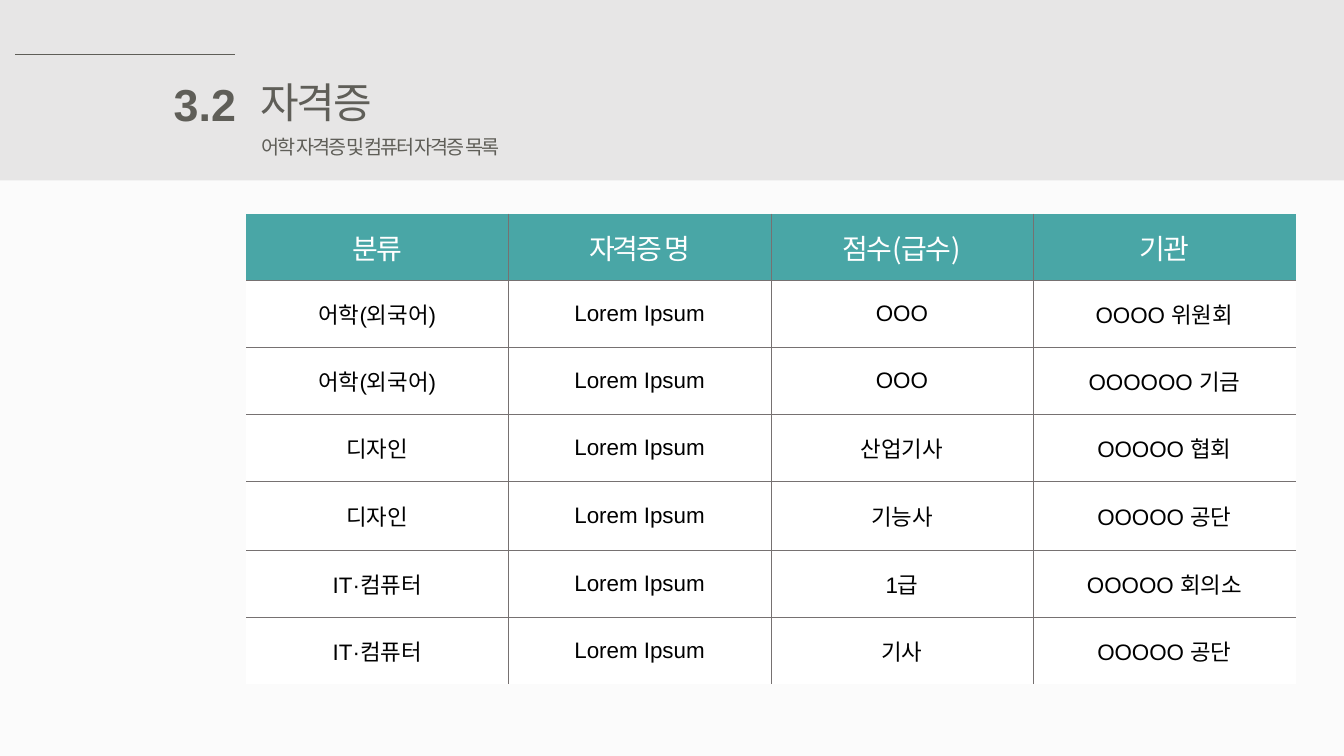
"""Builds the certificate list slide."""
from lxml import etree
from pptx import Presentation
from pptx.dml.color import RGBColor
from pptx.enum.shapes import MSO_CONNECTOR, MSO_SHAPE
from pptx.enum.text import MSO_ANCHOR, MSO_AUTO_SIZE, PP_ALIGN
from pptx.oxml.ns import qn
from pptx.util import Inches, Pt

LEFT, MID, RIGHT = PP_ALIGN.LEFT, PP_ALIGN.CENTER, PP_ALIGN.RIGHT
TOP, CENTRE = MSO_ANCHOR.TOP, MSO_ANCHOR.MIDDLE
GROW = MSO_AUTO_SIZE.SHAPE_TO_FIT_TEXT
RECT, LINE = MSO_SHAPE.RECTANGLE, MSO_CONNECTOR.STRAIGHT
SANS, KOREAN = "Arial", "Noto Sans CJK KR"
INK, TEAL, RULE, WHITE, BLACK = "5F5E58", "49A6A6", "767171", "FFFFFF", "000000"

ROWS = [
    ("분류", "자격증 명", "점수(급수)", "기관"),
    ("어학(외국어)", "Lorem Ipsum", "OOO", "OOOO 위원회"),
    ("어학(외국어)", "Lorem Ipsum", "OOO", "OOOOOO 기금"),
    ("디자인", "Lorem Ipsum", "산업기사", "OOOOO 협회"),
    ("디자인", "Lorem Ipsum", "기능사", "OOOOO 공단"),
    ("IT·컴퓨터", "Lorem Ipsum", "1급", "OOOOO 회의소"),
    ("IT·컴퓨터", "Lorem Ipsum", "기사", "OOOOO 공단"),
]
TALL_ROW, TALL = 4, 0.69


def paint(target, color):
    """Give a fill or line fill one solid colour."""
    target.solid()
    target.fore_color.rgb = RGBColor.from_string(color)


class Deck:
    """Holds the text style and the current slide."""

    def __init__(self):
        """Open a wide deck with one titled slide."""
        self.prs = Presentation()
        self.prs.slide_width = Inches(13.33)
        self.prs.slide_height = Inches(7.5)
        self.slide = self.prs.slides.add_slide(self.prs.slide_layouts[5])
        self.shapes = self.slide.shapes
        paint(self.slide.background.fill, "FBFBFB")

    def style(self, frame, text, size, font, color, align, space=0, bold=False):
        """Set the text of a frame and format its run."""
        frame.text = text
        para = frame.paragraphs[0]
        para.alignment = align
        run = para.runs[0]
        run.font.size = Pt(size)
        run.font.name = font
        run.font.bold = bold
        run.font.color.rgb = RGBColor.from_string(color)
        props = run.font._element
        props.set("spc", str(round(space * 100)))
        etree.SubElement(props, qn("a:ea"), typeface=KOREAN)

    def band(self, box, color):
        """Draw a plain filled rectangle."""
        shape = self.shapes.add_shape(RECT, *map(Inches, box))
        shape.shadow.inherit = False
        paint(shape.fill, color)
        shape.line.fill.background()

    def line(self, start, end, color, width):
        """Draw a straight line without a shadow."""
        rule = self.shapes.add_connector(LINE, *map(Inches, start + end))
        paint(rule.line.fill, color)
        rule.line.width = Pt(width)
        etree.SubElement(rule._element.spPr, qn("a:effectLst"))

    def place(self, shape, box, text, wrap=False, **look):
        """Position a text shape and fill it."""
        shape.left, shape.top, shape.width, shape.height = map(Inches, box)
        frame = shape.text_frame
        frame.word_wrap = wrap
        frame.auto_size = GROW
        frame.vertical_anchor = TOP
        self.style(frame, text, **look)

    def title(self, box, text, **look):
        """Fill the title placeholder and bring it to the front."""
        shape = self.shapes.title
        self.shapes.element.append(shape.element)
        self.place(shape, box, text, **look)

    def label(self, box, text, **look):
        """Add a text box."""
        shape = self.shapes.add_textbox(*map(Inches, box))
        self.place(shape, box, text, **look)

    def edge(self, cell, side, index, color, width):
        """Set one border of a cell, or hide it if color is None."""
        props = cell._tc.get_or_add_tcPr()
        line = etree.Element(qn("a:ln" + side), w=str(Pt(width)))
        if color:
            fill = etree.SubElement(line, qn("a:solidFill"))
            etree.SubElement(fill, qn("a:srgbClr"), val=color)
        else:
            etree.SubElement(line, qn("a:noFill"))
        props.insert(index, line)

    def table(self, box, rows):
        """Add a table with inner rules and a coloured header."""
        last, end = len(rows) - 1, len(rows[0]) - 1
        grid = self.shapes.add_table(last + 1, end + 1, *map(Inches, box)).table
        for col in grid.columns:
            col.width = Inches(box[2] / (end + 1))
        for r, texts in enumerate(rows):
            high = TALL if r == TALL_ROW else (box[3] - TALL) / last
            grid.rows[r].height = Inches(high)
            for c, text in enumerate(texts):
                cell = grid.cell(r, c)
                cell.vertical_anchor = CENTRE
                paint(cell.fill, WHITE if r else TEAL)
                if r:
                    self.style(cell.text_frame, text, 16, SANS, BLACK, MID)
                else:
                    self.style(cell.text_frame, text, 20, KOREAN, WHITE, MID, -1.5)
                inner = (c > 0, c < end, r > 0, r < last)
                for i, (side, shown) in enumerate(zip("LRTB", inner)):
                    self.edge(cell, side, i, RULE if shown else None, 0.25)


def main():
    """Build and save the slide."""
    deck = Deck()
    deck.band((0, 0, 13.33, 1.79), "E7E6E6")
    deck.line((0.15, 0.54), (2.33, 0.54), INK, 0.5)
    deck.label((1.59, 0.71, 0.85, 0.64), "3.2", size=32, font=SANS,
               color=INK, align=RIGHT, bold=True)
    deck.title((2.48, 0.71, 1.33, 0.61), "자격증", size=30, font=KOREAN,
               color=INK, align=LEFT, space=-1.5)
    deck.label((2.5, 1.29, 2.6, 0.34), "어학 자격증 및 컴퓨터 자격증 목록", wrap=True,
               size=14, font=SANS, color=INK, align=LEFT, space=-1.5)
    deck.table((2.44, 2.12, 10.41, 4.67), ROWS)
    deck.prs.save("out.pptx")


if __name__ == "__main__":
    main()
